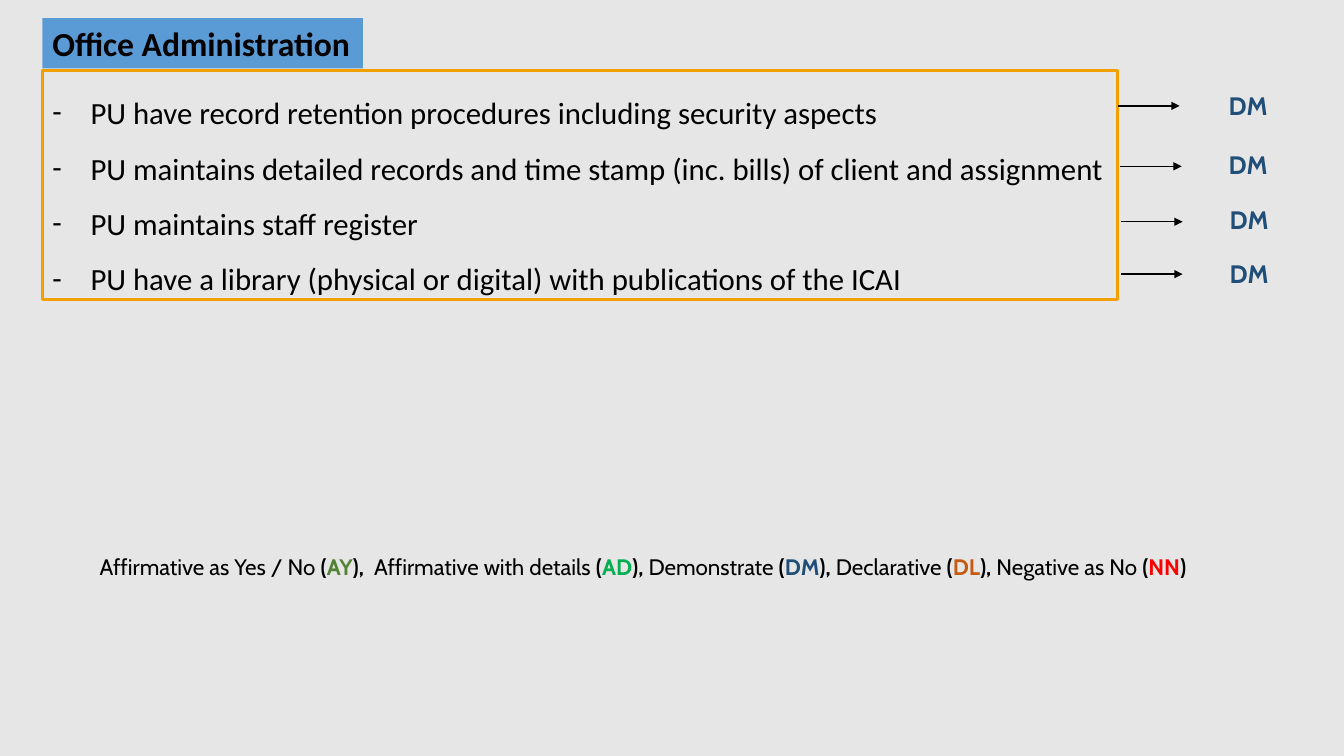
from lxml.etree import SubElement
from pptx import Presentation
from pptx.dml.color import RGBColor
from pptx.enum.shapes import MSO_CONNECTOR, MSO_SHAPE
from pptx.enum.text import MSO_ANCHOR, PP_ALIGN as Align
from pptx.oxml.ns import qn
from pptx.util import Inches, Pt

WIDTH, HEIGHT = 13.33, 7.5
BLACK, NAVY, ORANGE, BLUE, GREY = "000000", "1F4E79", "F1A000", "5B9BD5", "E7E6E6"
HEADING = "Office Administration"
CHECKS = [
    # text, answer code, arrow (x, y), code (x, y)
    ("PU have record retention procedures including security aspects", "DM", (11.09, 1.05), (12.01, 0.85)),
    ("PU maintains detailed records and time stamp (inc. bills) of client and assignment",
     "DM", (11.11, 1.65), (12.01, 1.43)),
    ("PU maintains staff register", "DM", (11.12, 2.2), (12.02, 1.98)),
    ("PU have a library (physical or digital) with publications of the ICAI", "DM", (11.12, 2.72), (12.02, 2.51)),
]
LEGEND = [
    ("Affirmative as Yes / No ", "AY", "548235", "),  "),
    ("Affirmative with details ", "AD", "00B050", "), "),
    ("Demonstrate ", "DM", NAVY, "), "),
    ("Declarative ", "DL", "C55A11", "), "),
    ("Negative as No ", "NN", "FF0000", ")"),
]
MARGIN, ARROW_LENGTH = 0.42, 0.61


def rgb(value):
    return RGBColor.from_string(value)


def write(paragraph, text, size=18, font="Calibri", color=BLACK, bold=False, align=Align.LEFT):
    run = paragraph.add_run()
    run.text = text
    run.font.size, run.font.name, run.font.bold = Pt(size), font, bold
    run.font.color.rgb = rgb(color)
    paragraph.alignment = align


def add_panel(slide, left, top, width, height, fill=None, line=None):
    panel = slide.shapes.add_shape(MSO_SHAPE.RECTANGLE, *map(Inches, (left, top, width, height)))
    panel.shadow.inherit = False
    if fill:
        panel.fill.solid()
        panel.fill.fore_color.rgb = rgb(fill)
    else:
        panel.fill.background()
    if line:
        panel.line.color.rgb = rgb(line)
        panel.line.width = Pt(2)
    else:
        panel.line.fill.background()
    panel.text_frame.word_wrap = True
    panel.text_frame.vertical_anchor = MSO_ANCHOR.TOP
    return panel.text_frame


def add_label(slide, left, top, width, height):
    label = slide.shapes.add_textbox(*map(Inches, (left, top, width, height))).text_frame
    label.word_wrap = True
    return label.paragraphs[0]


def add_dash(paragraph):
    paragraph.line_spacing = 1.5
    props = paragraph._p.get_or_add_pPr()
    props.set("marL", str(Inches(0.38)))
    props.set("indent", str(-Inches(0.38)))
    SubElement(props, qn("a:buFont")).set("typeface", "Calibri")
    SubElement(props, qn("a:buChar")).set("char", "-")


def add_arrow(slide, left, top):
    arrow = slide.shapes.add_connector(
        MSO_CONNECTOR.STRAIGHT, *map(Inches, (left, top, left + ARROW_LENGTH, top)))
    arrow.line.color.rgb = rgb(BLACK)
    arrow.line.width = Pt(1)
    SubElement(arrow.line._get_or_add_ln(), qn("a:tailEnd")).set("type", "triangle")
    SubElement(arrow._element.spPr, qn("a:effectLst"))


def main():
    """Build the office administration checklist slide."""
    deck = Presentation()
    deck.slide_width, deck.slide_height = Inches(WIDTH), Inches(HEIGHT)
    slide = deck.slides.add_slide(deck.slide_layouts[6])
    slide.background.fill.solid()
    slide.background.fill.fore_color.rgb = rgb(GREY)

    checklist = add_panel(slide, MARGIN, 0.7, 0.8 * WIDTH, 2.27, line=ORANGE)
    heading = add_panel(slide, MARGIN, 0.18, 3.18, 0.5, fill=BLUE)
    write(heading.paragraphs[0], HEADING, size=24, bold=True)

    for row, (check, code, arrow_at, code_at) in enumerate(CHECKS):
        item = checklist.add_paragraph() if row else checklist.paragraphs[0]
        write(item, check, size=22, align=Align.JUSTIFY)
        add_dash(item)
        add_arrow(slide, *arrow_at)
        write(add_label(slide, *code_at, 0.74, 0.4), code,
              font="Cabin", color=NAVY, bold=True, align=Align.CENTER)

    legend = add_label(slide, 0.89, 5.44, 11.56, 0.37)
    for meaning, code, color, closing in LEGEND:
        write(legend, meaning, size=16, font="Cabin")
        for part, tint in (("(", BLACK), (code, color), (closing, BLACK)):
            write(legend, part, size=16, font="Cabin", color=tint, bold=True)

    deck.save("out.pptx")


if __name__ == "__main__":
    main()
